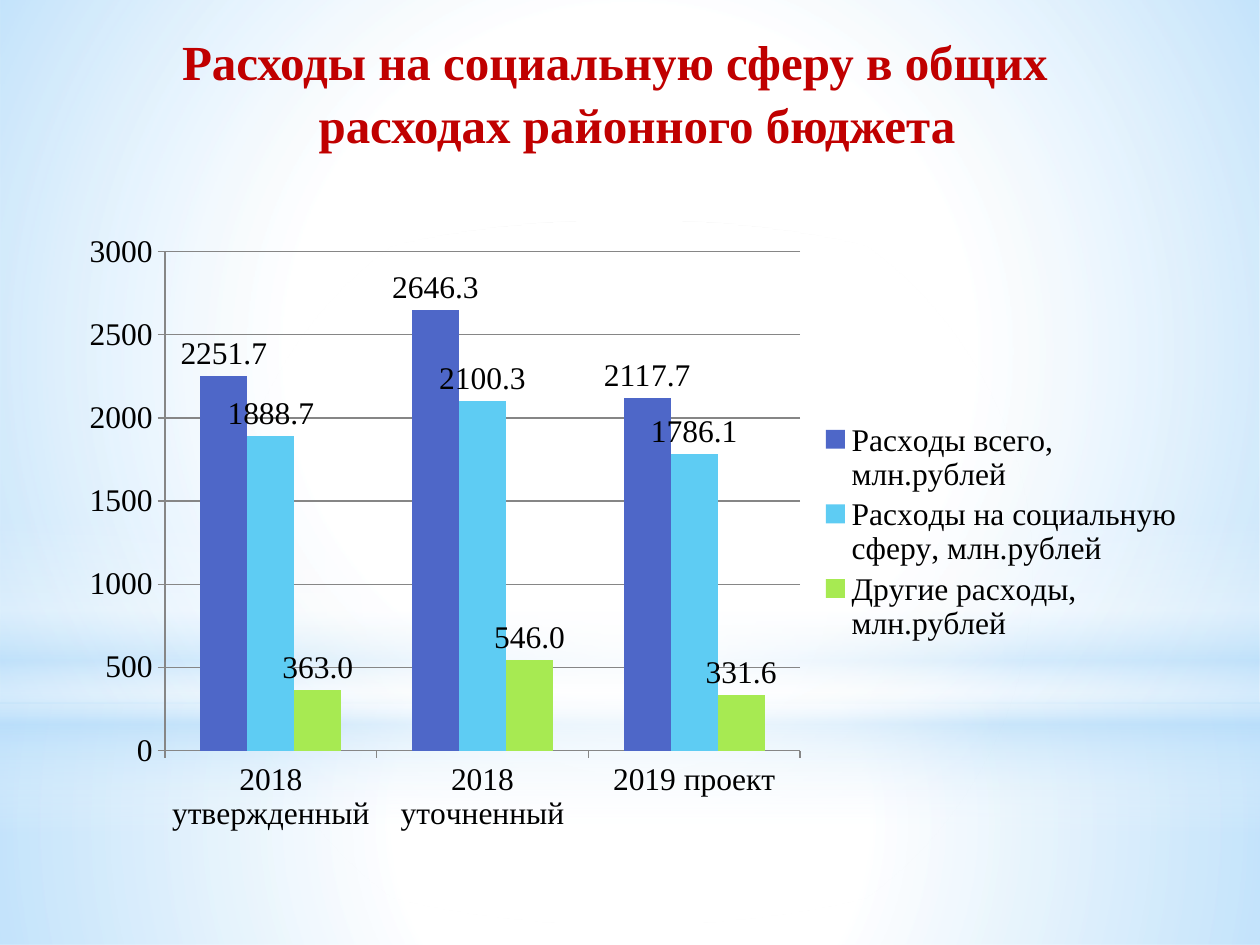
from lxml.etree import SubElement
from pptx import Presentation
from pptx.chart.data import CategoryChartData
from pptx.dml.color import RGBColor
from pptx.enum.chart import XL_CHART_TYPE, XL_LABEL_POSITION, XL_LEGEND_POSITION, XL_TICK_MARK
from pptx.enum.shapes import MSO_SHAPE
from pptx.enum.text import MSO_ANCHOR, PP_ALIGN
from pptx.oxml import parse_xml
from pptx.oxml.ns import nsdecls, qn
from pptx.util import Inches, Pt

WHITE = RGBColor(0xFF, 0xFF, 0xFF)
SKY = RGBColor(0xB4, 0xDC, 0xFA)
RED = RGBColor(0xC0, 0x00, 0x00)
BLACK = RGBColor(0x00, 0x00, 0x00)
GRAY = RGBColor(0x86, 0x86, 0x86)
BLUE = RGBColor(0x4E, 0x67, 0xC8)
CYAN = RGBColor(0x5E, 0xCC, 0xF3)
GREEN = RGBColor(0xA7, 0xEA, 0x52)
FONT = "Times New Roman"

RADIAL = '<a:path path="circle"><a:fillToRect l="50000" t="50000" r="50000" b="50000"/></a:path>'
VERTICAL = '<a:lin ang="5400000" scaled="0"/>'
BACKDROP = [
    (MSO_SHAPE.RECTANGLE, 5.58, 1.92, RADIAL, [(0, WHITE, 91), (37, WHITE, 76), (100, SKY, 79)]),
    (MSO_SHAPE.RECTANGLE, 0, 5.58, RADIAL, [(0, WHITE, 89), (48, WHITE, 62), (100, SKY, 79)]),
    (MSO_SHAPE.RECTANGLE, 4.12, 2.5, VERTICAL,
     [(0, WHITE, 0), (29, WHITE, 30), (45, SKY, 40), (55, WHITE, 26), (65, SKY, 60), (100, WHITE, 0)]),
    (MSO_SHAPE.OVAL, 1.75, 5.58, RADIAL, [(0, WHITE, 100), (56, WHITE, 0)]),
]

TITLE = "Расходы на социальную сферу в общих расходах районного бюджета"
CATEGORIES = ["2018 утвержденный", "2018 уточненный", "2019 проект"]
SERIES = [
    ("Расходы всего, млн.рублей", [2251.7, 2646.3, 2117.7], BLUE),
    ("Расходы на социальную сферу, млн.рублей", [1888.7, 2100.3, 1786.1], CYAN),
    ("Другие расходы, млн.рублей", [363, 546, 331.6], GREEN),
]
PLOT_AREA = {"x": 0.09, "y": 0.05, "w": 0.56, "h": 0.8}


def set_gradient(shape, stops, direction):
    """Fill a shape with a gradient of (position, colour, opacity) stops in percent."""
    stop_xml = "".join(
        f'<a:gs pos="{position * 1000}"><a:srgbClr val="{color}">'
        f'<a:alpha val="{opacity * 1000}"/></a:srgbClr></a:gs>'
        for position, color, opacity in stops)
    gradient = parse_xml(
        f'<a:gradFill {nsdecls("a")} rotWithShape="1"><a:gsLst>{stop_xml}</a:gsLst>{direction}</a:gradFill>')
    shape.element.spPr.find(qn("a:prstGeom")).addnext(gradient)


def add_backdrop(slide, left, top, width):
    """Layer the soft full-width gradients behind the content."""
    for kind, offset, height, direction, stops in BACKDROP:
        shape = slide.shapes.add_shape(kind, left, top + Inches(offset), width, Inches(height))
        shape.shadow.inherit = False
        shape.line.fill.background()
        set_gradient(shape, stops, direction)


def add_title(slide, left, top, width, height):
    """Place the centred title with its hanging indent."""
    text_frame = slide.shapes.add_textbox(left, top, width, height).text_frame
    text_frame.word_wrap = True
    text_frame.vertical_anchor = MSO_ANCHOR.TOP
    text_frame.text = TITLE
    paragraph = text_frame.paragraphs[0]
    paragraph.alignment = PP_ALIGN.CENTER
    paragraph.line_spacing = 1.07
    properties = paragraph._p.get_or_add_pPr()
    properties.set("marL", str(Inches(0.35)))
    properties.set("indent", str(Inches(-0.35)))
    font = paragraph.runs[0].font
    font.name, font.size, font.bold = FONT, Pt(28), True
    font.color.rgb = RED


def set_plot_area(chart):
    """Fix the inner plot area as fractions of the chart."""
    plot_area = chart._chartSpace.chart.plotArea
    layout = plot_area.find(qn("c:layout"))
    if layout is None:
        layout = parse_xml(f'<c:layout {nsdecls("c")}/>')
        plot_area.insert(0, layout)
    manual = SubElement(layout, qn("c:manualLayout"))
    settings = {"layoutTarget": "inner", "xMode": "edge", "yMode": "edge", **PLOT_AREA}
    for name, value in settings.items():
        SubElement(manual, qn(f"c:{name}")).set("val", str(value))


def add_spending_chart(slide, left, top, width, height):
    """Place the clustered columns of total, social and other spending."""
    chart_data = CategoryChartData()
    chart_data.categories = CATEGORIES
    for name, values, _ in SERIES:
        chart_data.add_series(name, values)
    chart = slide.shapes.add_chart(
        XL_CHART_TYPE.COLUMN_CLUSTERED, left, top, width, height, chart_data).chart
    chart.has_title = False
    chart.font.name, chart.font.size = FONT, Pt(18)
    chart.font.color.rgb = BLACK
    chart.has_legend = True
    chart.legend.position = XL_LEGEND_POSITION.RIGHT
    chart.legend.include_in_layout = False
    set_plot_area(chart)

    plot = chart.plots[0]
    plot.gap_width, plot.overlap = 150, 0
    plot.vary_by_categories = False
    for series, (_, _, color) in zip(plot.series, SERIES):
        series.format.fill.solid()
        series.format.fill.fore_color.rgb = color
        labels = series.data_labels
        labels.show_value = True
        labels.position = XL_LABEL_POSITION.OUTSIDE_END
        labels.number_format, labels.number_format_is_linked = "0.0", False

    value_axis = chart.value_axis
    value_axis.minimum_scale, value_axis.maximum_scale = 0, 3000
    value_axis.major_unit = 500
    value_axis.has_major_gridlines = True
    for axis in (chart.category_axis, value_axis):
        axis.major_tick_mark = XL_TICK_MARK.OUTSIDE
    for line in (chart.category_axis.format.line, value_axis.format.line,
                 value_axis.major_gridlines.format.line):
        line.color.rgb = GRAY
        line.width = Pt(0.75)


def main():
    """Build the slide and save the presentation."""
    presentation = Presentation()
    presentation.slide_width, presentation.slide_height = Inches(10), Inches(7.5)
    slide = presentation.slides.add_slide(presentation.slide_layouts[6])
    add_backdrop(slide, Inches(0), Inches(0), presentation.slide_width)
    add_title(slide, Inches(0.98), Inches(0.17), Inches(7.8), Inches(1.46))
    add_spending_chart(slide, Inches(0.5), Inches(1.75), Inches(9), Inches(4.95))
    presentation.save("out.pptx")


if __name__ == "__main__":
    main()
